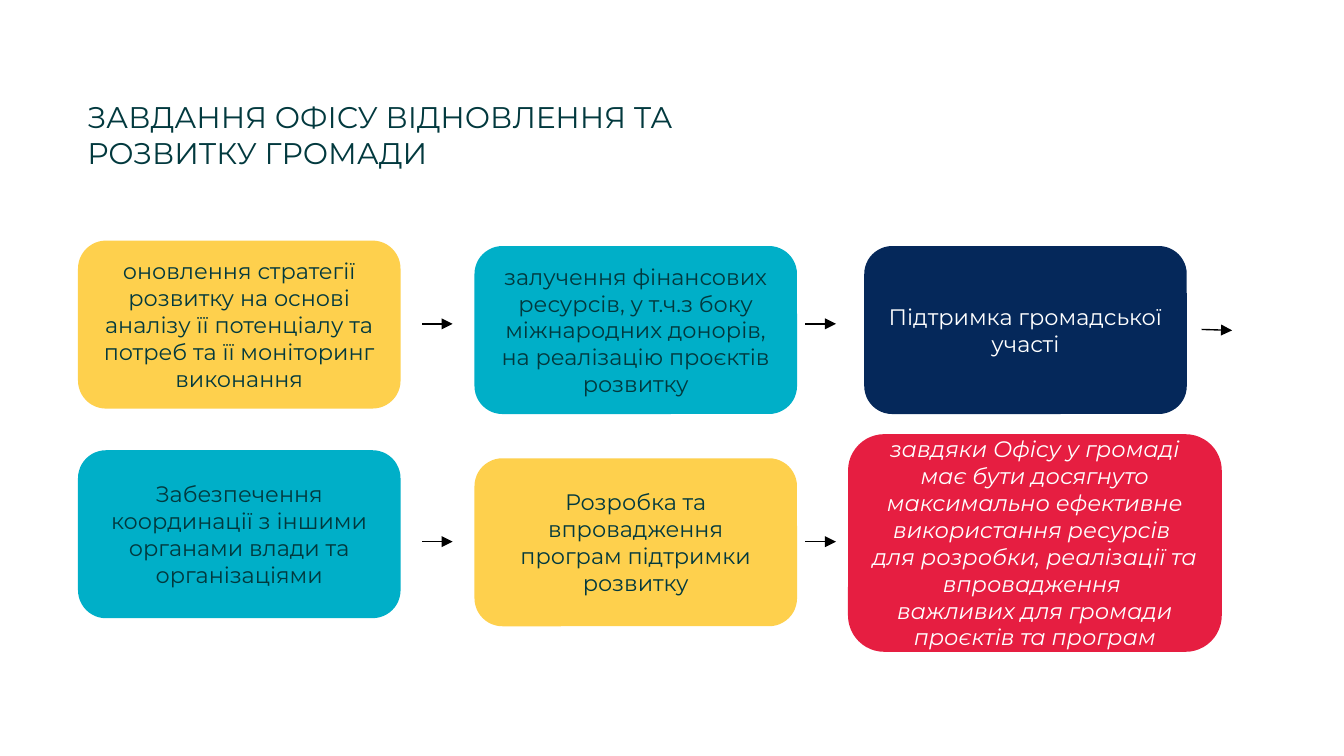
from lxml import etree
from pptx import Presentation
from pptx import util as u
from pptx.dml import color
from pptx.enum import shapes, text
from pptx.oxml import ns

TEAL, YELLOW, CYAN, NAVY, RED, WHITE = (
    "02393E", "FED04D", "00AFC8", "05285A", "E61E41", "FFFFFF")


def rgb(value):
    return color.RGBColor.from_string(value)


class Deck:
    """Draws styled elements on the current slide."""

    font = "Montserrat"

    def __init__(self, width, height):
        self.prs = Presentation()
        self.prs.slide_width, self.prs.slide_height = u.Pt(width), u.Pt(height)
        self.s = self.prs.slides.add_slide(self.prs.slide_layouts[6])

    def label(self, sp, lines, size, fg, align, anchor, insets, italic=False):
        tf = sp.text_frame
        tf.word_wrap = True
        tf.vertical_anchor = anchor
        tf.margin_left = tf.margin_right = u.Pt(insets[0])
        tf.margin_top = tf.margin_bottom = u.Pt(insets[1])
        tf.text = "\n".join(lines)
        for p in tf.paragraphs:
            p.alignment = align
            p.font.name = self.font
            p.font.size = u.Pt(size)
            p.font.italic = italic
            p.font.color.rgb = rgb(fg)

    def title(self, lines, *box):
        sp = self.s.shapes.add_textbox(*map(u.Pt, box))
        self.label(sp, lines, 16, TEAL, text.PP_ALIGN.LEFT,
                   text.MSO_ANCHOR.TOP, (5, 3))

    def card(self, lines, x, y, fill, fg=TEAL, w=172.8, h=90, italic=False):
        sp = self.s.shapes.add_shape(
            shapes.MSO_SHAPE.ROUNDED_RECTANGLE, *map(u.Pt, (x, y, w, h)))
        sp.shadow.inherit = False
        sp.fill.solid()
        sp.fill.fore_color.rgb = rgb(fill)
        sp.line.fill.background()
        self.label(sp, lines, 12, fg, text.PP_ALIGN.CENTER,
                   text.MSO_ANCHOR.MIDDLE, (7.2, 7.2), italic)

    def arrow(self, x, y, length=16.4, rise=0):
        sp = self.s.shapes.add_connector(
            shapes.MSO_CONNECTOR.STRAIGHT,
            *map(u.Pt, (x, y, x + length, y + rise)))
        sp.line.color.rgb = rgb("000000")
        sp.line.width = u.Pt(0.75)
        pr = sp.element.spPr
        etree.SubElement(pr.find(ns.qn("a:ln")), ns.qn("a:tailEnd"),
                         type="triangle")
        etree.SubElement(pr, ns.qn("a:effectLst"))


def main():
    deck = Deck(720, 405)
    deck.title(["ЗАВДАННЯ ОФІСУ ВІДНОВЛЕННЯ ТА", "РОЗВИТКУ ГРОМАДИ"],
               41.8, 49.7, 506.2, 43.9)

    left, middle, right = 41.8, 254.2, 463
    deck.card(["оновлення стратегії розвитку на основі аналізу її потенціалу "
               "та потреб та її моніторинг виконання"], left, 128.9, YELLOW)
    deck.card(["залучення фінансових ресурсів, у т.ч.з боку міжнародних "
               "донорів, на реалізацію проєктів розвитку"],
              middle, 131.8, CYAN)
    deck.card(["Підтримка громадської участі"], right, 131.8, NAVY, WHITE)
    deck.card(["Забезпечення координації з іншими органами влади та "
               "організаціями"], left, 241.2, CYAN)
    deck.card(["Розробка та впровадження програм підтримки розвитку"],
              middle, 245.5, YELLOW)
    deck.card(["завдяки Офісу у громаді має бути досягнуто максимально "
               "ефективне використання ресурсів ",
               "для розробки, реалізації та впровадження ",
               "важливих для громади проєктів та програм"],
              454.3, 232.6, RED, WHITE, 200.2, 116.6, italic=True)

    for y in (173.5, 290.2):
        for x in (226.1, 431.5):
            deck.arrow(x, y)
    deck.arrow(643.7, 176.5, rise=0.5)

    deck.prs.save("out.pptx")


if __name__ == "__main__":
    main()
